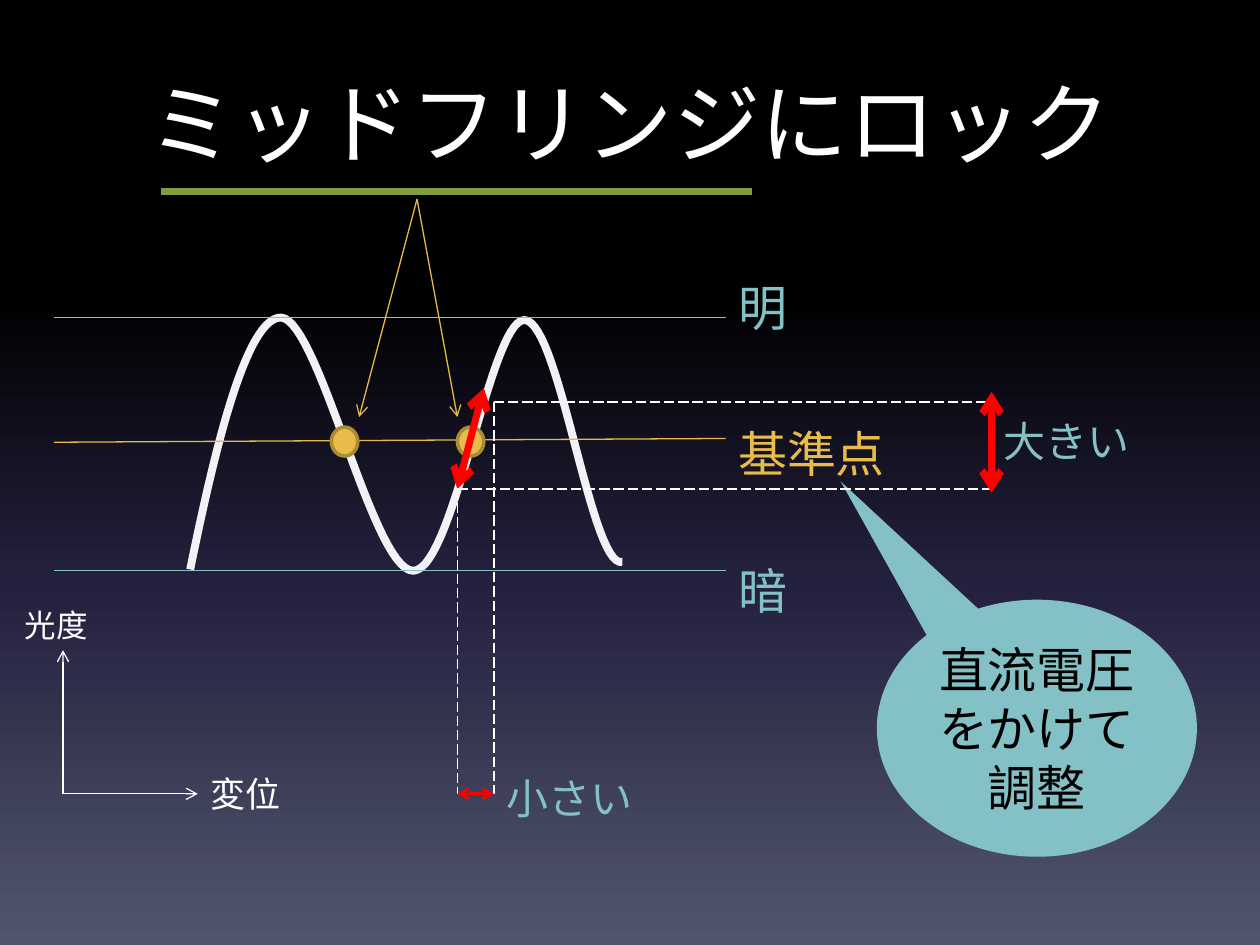
from lxml import etree
from pptx import Presentation
from pptx.dml.color import RGBColor
from pptx.enum.dml import MSO_LINE
from pptx.enum.shapes import MSO_CONNECTOR, MSO_SHAPE
from pptx.enum.text import MSO_ANCHOR, PP_ALIGN
from pptx.oxml import parse_xml
from pptx.oxml.ns import nsdecls, qn
from pptx.util import Inches, Pt

STRAIGHT = MSO_CONNECTOR.STRAIGHT
ELLIPSE = MSO_SHAPE.OVAL
CALLOUT = MSO_SHAPE.OVAL_CALLOUT
LONG_DASH = MSO_LINE.LONG_DASH
TOP, MIDDLE = MSO_ANCHOR.TOP, MSO_ANCHOR.MIDDLE
LEFT, CENTER = PP_ALIGN.LEFT, PP_ALIGN.CENTER

FONT = "Calibri"
COLORS = {
    "white": "FFFFFF", "black": "000000", "wave": "F2F2F6", "teal": "83C1C6",
    "gold_line": "E7BA45", "gold": "E8BC4A", "gold_edge": "AC8B37",
    "green": "839C41", "red": "FF0000",
}
BACKGROUND = [(0, "000000"), (31, "000000"), (62, "24213E"), (100, "51566D")]


def rgb(name):
    return RGBColor.from_string(COLORS[name])


def bezier(start, control_1, control_2, end, steps=30):
    """Points along a cubic curve, without its start."""
    points = []
    for step in range(1, steps + 1):
        t = step / steps
        weights = ((1 - t) ** 3, 3 * t * (1 - t) ** 2, 3 * t * t * (1 - t), t ** 3)
        corners = (start, control_1, control_2, end)
        points.append(tuple(sum(w * corner[axis] for w, corner in zip(weights, corners))
                            for axis in (0, 1)))
    return points


class SlideBuilder:
    def __init__(self, presentation):
        self.slide = presentation.slides.add_slide(presentation.slide_layouts[5])
        self.shapes = self.slide.shapes

    def background(self, stops):
        stop_xml = "".join(
            f'<a:gs pos="{position * 1000}"><a:srgbClr val="{color}"/></a:gs>'
            for position, color in stops)
        self.slide.element.cSld.insert(0, parse_xml(
            f'<p:bg {nsdecls("p", "a")}><p:bgPr><a:gradFill><a:gsLst>{stop_xml}</a:gsLst>'
            '<a:lin ang="5400000" scaled="0"/></a:gradFill><a:effectLst/></p:bgPr></p:bg>'))

    def set_text(self, shape, text, size, color, align=LEFT, anchor=TOP):
        frame = shape.text_frame
        frame.word_wrap = True
        frame.vertical_anchor = anchor
        paragraph = frame.paragraphs[0]
        paragraph.text = text
        paragraph.alignment = align
        paragraph.font.name = FONT
        paragraph.font.size = Pt(size)
        paragraph.font.color.rgb = rgb(color)

    def title(self, text, left, top, width, height):
        title = self.shapes.title
        title.left, title.top = Inches(left), Inches(top)
        title.width, title.height = Inches(width), Inches(height)
        self.set_text(title, text, 50, "white", CENTER)

    def label(self, text, left, top, width, height, size, color):
        box = self.shapes.add_textbox(Inches(left), Inches(top), Inches(width), Inches(height))
        self.set_text(box, text, size, color)

    def shape(self, kind, left, top, width, height, fill, edge=None):
        shape = self.shapes.add_shape(
            kind, Inches(left), Inches(top), Inches(width), Inches(height))
        shape.shadow.inherit = False
        shape.fill.solid()
        shape.fill.fore_color.rgb = rgb(fill)
        if edge:
            shape.line.color.rgb = rgb(edge)
            shape.line.width = Pt(2)
        else:
            shape.line.fill.background()
        return shape

    def line(self, start, end, color, width=0.75, dash=None, arrows=()):
        connector = self.shapes.add_connector(
            STRAIGHT, *(Inches(value) for value in (*start, *end)))
        connector.line.color.rgb = rgb(color)
        connector.line.width = Pt(width)
        if dash:
            connector.line.dash_style = dash
        properties = connector.element.spPr
        line_element = properties.find(qn("a:ln"))
        for arrow in arrows:
            etree.SubElement(line_element, qn(f"a:{arrow}"), type="arrow")
        etree.SubElement(properties, qn("a:effectLst"))

    def curve(self, start, segments, color, width):
        points = []
        for segment in segments:
            points += bezier(points[-1] if points else start, *segment)
        builder = self.shapes.build_freeform(
            Inches(start[0]), Inches(start[1]), scale=1.0)
        builder.add_line_segments([(Inches(x), Inches(y)) for x, y in points], close=False)
        shape = builder.convert_to_shape()
        shape.shadow.inherit = False
        shape.fill.background()
        shape.line.color.rgb = rgb(color)
        shape.line.width = Pt(width)


def main():
    presentation = Presentation()
    presentation.slide_width, presentation.slide_height = Inches(10), Inches(7.5)
    builder = SlideBuilder(presentation)
    one_way, both_ways = ("tailEnd",), ("headEnd", "tailEnd")

    builder.background(BACKGROUND)
    builder.title("ミッドフリンジにロック", 0.5, 0.5, 9, 1.25)

    # Fringe curve
    builder.curve((1.51, 4.52), [
        ((1.68, 3.69), (1.94, 2.52), (2.23, 2.52)),
        ((2.53, 2.53), (2.96, 4.53), (3.28, 4.53)),
        ((3.6, 4.53), (3.89, 2.55), (4.16, 2.54)),
        ((4.44, 2.53), (4.69, 4.52), (4.94, 4.46)),
    ], "wave", 4.5)

    # Bright, dark and reference levels
    level_left, level_right = 0.43, 5.76
    for text, start_y, end_y, label_top, label_width, line_color, text_color in (
        ("明", 2.52, 2.52, 2.15, 0.89, "teal", "teal"),
        ("暗", 4.53, 4.53, 4.4, 0.89, "teal", "teal"),
        ("基準点", 3.51, 3.48, 3.31, 1.42, "gold_line", "gold"),
    ):
        builder.line((level_left, start_y), (level_right, end_y), line_color)
        builder.label(text, level_right, label_top, label_width, 0.57, 28, text_color)

    # Lock points, pointed at from the underlined title
    for dot_left, arrow_x in ((2.63, 2.85), (3.63, 3.63)):
        builder.shape(ELLIPSE, dot_left, 3.39, 0.21, 0.23, "gold", "gold_edge")
        builder.line((3.31, 1.58), (arrow_x, 3.31), "gold_line", arrows=one_way)
    builder.line((1.28, 1.52), (5.97, 1.52), "green", 4)

    # Callout
    callout = builder.shape(CALLOUT, 6.96, 4.76, 2.54, 2.04, "teal")
    callout.adjustments[0], callout.adjustments[1] = -0.613, -0.96
    builder.set_text(callout, "直流電圧をかけて調整", 28, "black", CENTER, MIDDLE)

    # Axes
    base = 6.3
    for axis_end in ((1.57, base), (0.5, 5.16)):
        builder.line((0.5, base), axis_end, "white", arrows=one_way)
    builder.label("変位", 1.57, 6.08, 0.83, 0.44, 20, "white")
    builder.label("光度", 0.1, 4.76, 0.83, 0.4, 18, "white")

    # Small displacement giving a large change in brightness
    near, far, right = (3.63, 3.88), (3.92, 3.19), 7.87
    builder.line((3.84, 3.08), near, "red", 4, arrows=both_ways)
    for x, y in (near, far):
        builder.line((x, y), (x, base), "white", dash=LONG_DASH)
        builder.line((x, y), (right, y), "white", dash=LONG_DASH)
    builder.line((far[0], base), (near[0], base), "red", 1.5, arrows=both_ways)
    builder.line((right, 3.11), (right, 3.91), "red", 4, arrows=both_ways)
    builder.label("小さい", far[0], 6.08, 1.37, 0.5, 24, "teal")
    builder.label("大きい", right, 3.25, 1.3, 0.5, 24, "teal")

    presentation.save("out.pptx")


if __name__ == "__main__":
    main()
